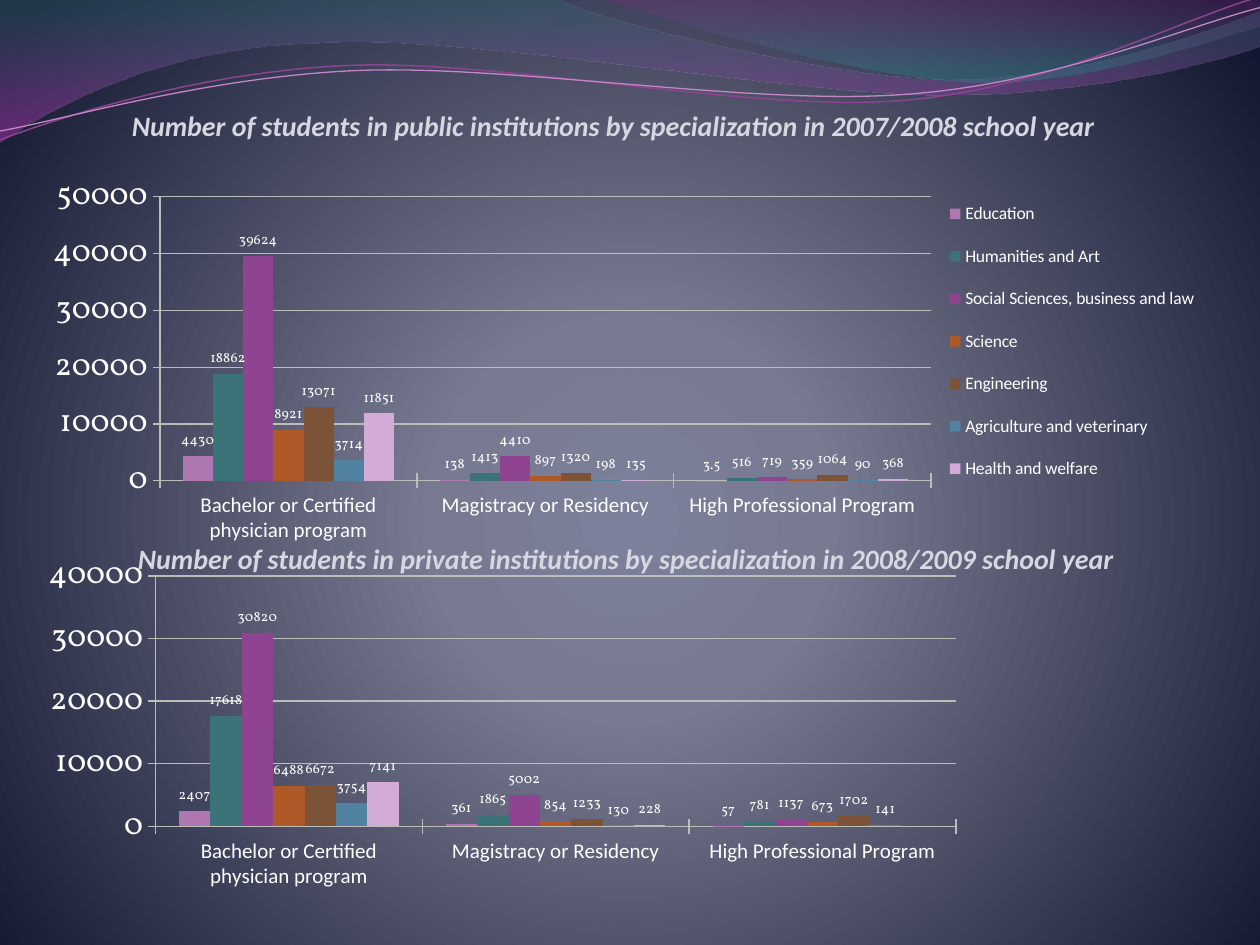
import math

import lxml.etree
import pptx
import pptx.chart.data
import pptx.dml.color
import pptx.enum.chart
import pptx.enum.text
import pptx.oxml.ns
import pptx.util

RGB = pptx.dml.color.RGBColor
qn = pptx.oxml.ns.qn

WHITE = RGB(0xFF, 0xFF, 0xFF)
HEADING = RGB(0xD6, 0xD7, 0xE0)
GRID_LINE = RGB(0xBB, 0xBD, 0xB8)
PURPLE_LINE = RGB(0x8D, 0x44, 0x90)
PINK_LINE = RGB(0xC4, 0x86, 0xC6)
TEAL, MAGENTA = RGB(0x2D, 0x63, 0x68), RGB(0xA5, 0x30, 0xA9)
PLUM, SEA = RGB(0x7F, 0x2F, 0x82), RGB(0x2F, 0x7B, 0x82)
GLOW, MIST, NIGHT = RGB(0x7D, 0x80, 0x9A), RGB(0x78, 0x7A, 0x92), RGB(0x13, 0x16, 0x2F)
SERIES_COLORS = [
    RGB(0xAF, 0x77, 0xB1), RGB(0x3B, 0x73, 0x78), RGB(0x8E, 0x44, 0x91), RGB(0xAE, 0x5A, 0x28),
    RGB(0x7C, 0x53, 0x36), RGB(0x52, 0x82, 0xA1), RGB(0xD2, 0xAB, 0xD6),
]

PROGRAMS = ["Bachelor or Certified physician program", "Magistracy or Residency",
            "High Professional Program"]
PUBLIC = {
    "Education": (4430, 138, 3.5),
    "Humanities and Art": (18862, 1413, 516),
    "Social Sciences, business and law": (39624, 4410, 719),
    "Science": (8921, 897, 359),
    "Engineering": (13071, 1320, 1064),
    "Agriculture and veterinary": (3714, 198, 90),
    "Health and welfare": (11851, 135, 368),
}
PRIVATE_VALUES = [(2407, 361, 57), (17618, 1865, 781), (30820, 5002, 1137), (6488, 854, 673),
                  (6672, 1233, 1702), (3754, 130, 141), (7141, 228, None)]
PRIVATE = {f"Series {number}": values for number, values in enumerate(PRIVATE_VALUES, 1)}


def add_xml(parent, tag, **attributes):
    return lxml.etree.SubElement(parent, qn(tag), {k: str(v) for k, v in attributes.items()})


def set_gradient(fill, element, stops, circle=False):
    """Fill with (percent, colour, opacity) stops, running down or out from a centre."""
    fill.gradient()
    gradient = element.find(".//" + qn("a:gradFill"))
    gradient.clear()
    stop_list = add_xml(gradient, "a:gsLst")
    for percent, color, opacity in stops:
        stop = add_xml(stop_list, "a:gs", pos=percent * 1000)
        add_xml(add_xml(stop, "a:srgbClr", val=color), "a:alpha", val=opacity * 1000)
    if circle:
        center = add_xml(gradient, "a:path", path="circle")
        add_xml(center, "a:fillToRect", l=10000, t=110000, r=10000, b=100000)
    else:
        add_xml(gradient, "a:lin", ang=5400000, scaled=0)


def set_layout(parent, index, shares, mode="edge", inner=False):
    """Place a chart part by x, y and, if given, width and height as shares of the chart."""
    for old in parent.findall(qn("c:layout")):
        parent.remove(old)
    layout = lxml.etree.Element(qn("c:layout"))
    parent.insert(index, layout)
    manual = add_xml(layout, "c:manualLayout")
    if inner:
        add_xml(manual, "c:layoutTarget", val="inner")
    for side in "xy":
        add_xml(manual, f"c:{side}Mode", val=mode)
    for side, share in zip("xywh", shares):
        add_xml(manual, f"c:{side}", val=share)


def shares_of(frame, cells):
    left, top, width, height = frame
    x, y, wide, high = cells
    return (x - left) / width, (y - top) / height, wide / width, high / height


def set_font(font, name, size, color=WHITE):
    font.name, font.size = name, pptx.util.Pt(size)
    font.color.rgb = color


class SlidePainter:
    """Draws on one slide; lengths count cells of a 100 by 75 grid."""

    body_font, number_font = "Calibri", "Vollkorn"

    def __init__(self, deck):
        self.slide = deck.slides.add_slide(deck.slide_layouts[6])
        self.cell = deck.slide_width // 100

    def place(self, *cells):
        return [pptx.util.Emu(round(cell * self.cell)) for cell in cells]

    def background(self, stops):
        set_gradient(self.slide.background.fill, self.slide.element, stops, circle=True)

    def outline(self, frame, start, segments, closed, rotation=0):
        """Draw segments of one point (straight) or three (curve), as seen after rotation."""
        left, top, width, height = frame
        middle_x, middle_y = left + width / 2, top + height / 2
        sine, cosine = math.sin(math.radians(rotation)), math.cos(math.radians(rotation))

        def local(point):
            x, y = point[0] - middle_x, point[1] - middle_y
            return self.place(x * cosine + y * sine + width / 2,
                              y * cosine - x * sine + height / 2)

        builder = self.slide.shapes.build_freeform(*local(start))
        builder.add_line_segments([local(segment[-1]) for segment in segments], close=closed)
        shape = builder.convert_to_shape()
        shape.left, shape.top, shape.width, shape.height = self.place(*frame)
        shape.rotation = rotation
        shape.shadow.inherit = False
        track = shape.element.find(".//" + qn("a:path"))
        track.clear()
        track.set("w", str(shape.width))
        track.set("h", str(shape.height))
        for number, segment in enumerate([[start]] + segments):
            tag = "a:moveTo" if number == 0 else "a:cubicBezTo" if len(segment) == 3 else "a:lnTo"
            step = add_xml(track, tag)
            for x, y in map(local, segment):
                add_xml(step, "a:pt", x=x, y=y)
        if closed:
            add_xml(track, "a:close")
        return shape

    def wave(self, frame, start, segments, stops):
        shape = self.outline(frame, start, segments, True)
        shape.line.fill.background()
        set_gradient(shape.fill, shape.element, stops)

    def strand(self, frame, start, segments, color, width):
        shape = self.outline(frame, start, segments, False, rotation=357.3)
        shape.fill.background()
        shape.line.color.rgb = color
        shape.line.width = pptx.util.Pt(width)

    def heading(self, text, *cells):
        frame = self.slide.shapes.add_textbox(*self.place(*cells)).text_frame
        frame.word_wrap = True
        frame.margin_left = frame.margin_right = frame.margin_top = frame.margin_bottom = 0
        para = frame.paragraphs[0]
        para.alignment = pptx.enum.text.PP_ALIGN.CENTER
        span = para.add_run()
        span.text = text
        set_font(span.font, self.body_font, 16, HEADING)
        span.font.bold = span.font.italic = True

    def columns(self, series, maximum, frame, plot_cells, legend_cells=None):
        data = pptx.chart.data.CategoryChartData()
        data.categories = PROGRAMS
        for name, values in series.items():
            data.add_series(name, values)
        kind = pptx.enum.chart.XL_CHART_TYPE.COLUMN_CLUSTERED
        chart = self.slide.shapes.add_chart(kind, *self.place(*frame), data).chart
        chart.has_title = False
        set_font(chart.font, self.number_font, 18)
        plot = chart.plots[0]
        plot.gap_width, plot.overlap, plot.vary_by_categories = 150, 0, False
        for bars, color in zip(plot.series, SERIES_COLORS):
            bars.format.fill.solid()
            bars.format.fill.fore_color.rgb = color
            bars.invert_if_negative = False
            labels = bars.data_labels
            labels.show_value = True
            labels.position = pptx.enum.chart.XL_LABEL_POSITION.OUTSIDE_END
            set_font(labels.font, self.number_font, 8)
        value_axis, category_axis = chart.value_axis, chart.category_axis
        value_axis.minimum_scale, value_axis.maximum_scale = 0, maximum
        value_axis.major_unit = 10000
        value_axis.has_major_gridlines = True
        set_font(value_axis.tick_labels.font, self.number_font, 18)
        set_font(category_axis.tick_labels.font, self.body_font, 12)
        for axis in (value_axis, category_axis):
            axis.major_tick_mark = pptx.enum.chart.XL_TICK_MARK.CROSS
        for part in (value_axis, category_axis, value_axis.major_gridlines):
            part.format.line.color.rgb = GRID_LINE
            part.format.line.width = pptx.util.Pt(0.75)
        set_layout(chart.element.find(".//" + qn("c:plotArea")), 0,
                   shares_of(frame, plot_cells), inner=True)
        chart.has_legend = legend_cells is not None
        if chart.has_legend:
            chart.legend.position = pptx.enum.chart.XL_LEGEND_POSITION.RIGHT
            chart.legend.include_in_layout = False
            set_font(chart.legend.font, self.body_font, 10)
            set_layout(chart.element.find(".//" + qn("c:legend")), 1,
                       shares_of(frame, legend_cells))


def main():
    deck = pptx.Presentation()
    deck.slide_width, deck.slide_height = pptx.util.Inches(10), pptx.util.Inches(7.5)
    painter = SlidePainter(deck)
    painter.background([(0, GLOW, 100), (25, MIST, 100), (100, NIGHT, 100)])

    painter.wave((-0.1, -0.1, 100.2, 11.4), (0, 0), [
        [(44, -0.1)], [(47.6, 1.7), (66.4, 6.3), (75.8, 6.3)],
        [(85.3, 6.3), (95.8, 2.6), (100, 0.9)], [(100.1, 3.6)],
        [(98.3, 4.4), (87, 7.6), (74.6, 7.5)], [(62.2, 7.5), (38.2, 2.8), (25.7, 3.4)],
        [(12.9, 3.6), (4.6, 8.3), (-0.1, 11.3)]], [(0, TEAL, 45), (100, MAGENTA, 55)])
    painter.wave((47.9, -0.1, 52.1, 7), (47.9, -0.1), [
        [(50.9, 1.1), (68.2, 6.2), (76.9, 6.5)], [(85.6, 6.9), (96.1, 3.2), (100, 2.1)],
        [(100, 0)]], [(0, PLUM, 30), (80, SEA, 45)])
    painter.strand((-0.2, 2.2, 100.2, 7.1), (0, 11.1), [
        [(4.8, 9.3), (15.8, 5.7), (27.7, 5.2)], [(39.5, 4.7), (59.3, 8.9), (71.3, 8)],
        [(83.3, 7.1), (93.8, 1.5), (99.8, -0.2)]], PURPLE_LINE, 0.85)
    painter.strand((-0.2, 3, 100.3, 5.8), (0, 10.4), [
        [(4.7, 9.6), (16.4, 6.1), (28.3, 5.6)], [(40.3, 5.1), (59.7, 8.4), (71.7, 7.5)],
        [(83.6, 6.7), (94.1, 2.1), (100, 0.6)]], PINK_LINE, 0.75)

    painter.heading("Number of students in public institutions by specialization in "
                    "2007/2008 school year", 6.2, 8.6, 85, 3.9)
    painter.heading("Number of students in private institutions by specialization in "
                    "2008/2009 school year", 3.9, 43, 91.6, 3.1)
    painter.columns(PUBLIC, 50000, (2.3, 13.3, 94.5, 30.5), (12.7, 15.63, 61.19, 22.54),
                    legend_cells=(74.67, 14.4, 20.8, 25.4))
    painter.columns(PRIVATE, 40000, (2.3, 43.4, 75, 27.7), (12.34, 45.71, 63.53, 19.88))
    deck.save("out.pptx")


if __name__ == "__main__":
    main()
